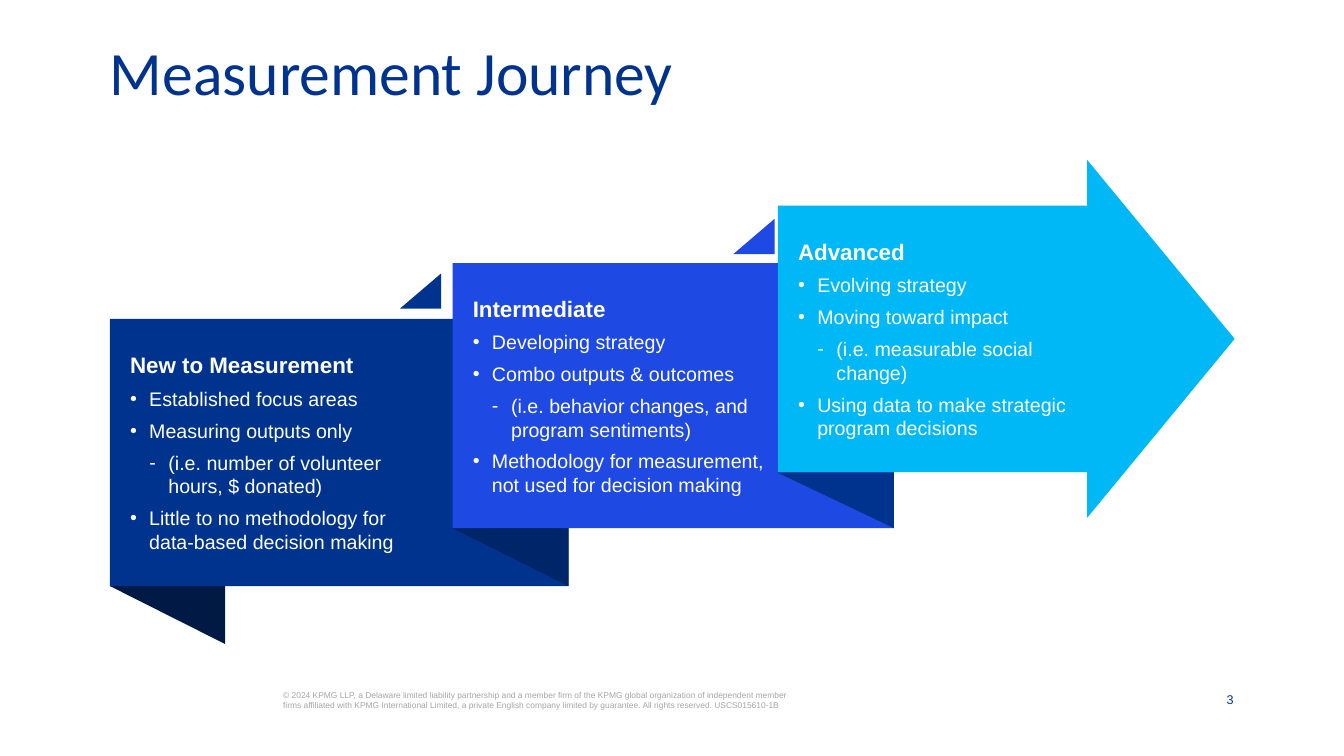
from dataclasses import dataclass

from lxml.etree import SubElement
from pptx import Presentation
from pptx.dml.color import RGBColor
from pptx.enum.shapes import MSO_SHAPE
from pptx.enum.text import MSO_ANCHOR as Anchor, PP_ALIGN as Align
from pptx.oxml.ns import qn
from pptx.util import Pt

NAVY, BLUE, CYAN = "00338D", "1E49E2", "00B8F5"
WHITE, GREY = "FFFFFF", "A6A6A6"
INSET = 14.4
INDENT = 13.7


@dataclass(frozen=True)
class Item:
    text: str
    depth: int = 1


@dataclass(frozen=True)
class Fold:
    """Shaded triangle hanging from the lower left corner of a stage."""
    left: float
    top: float
    width: float
    height: float
    color: str


@dataclass(frozen=True)
class Stage:
    heading: str
    items: tuple[Item, ...]
    preset: MSO_SHAPE
    adjustments: tuple[float, ...]
    left: float
    top: float
    width: float
    height: float
    right_inset: float
    color: str
    fold: Fold


@dataclass(frozen=True)
class Corner:
    left: float
    top: float
    color: str


STAGES = (
    Stage(
        "New to Measurement",
        (
            Item("Established focus areas"),
            Item("Measuring outputs only"),
            Item("(i.e. number of volunteer hours, $ donated)", 2),
            Item("Little to no methodology for\ndata-based decision making"),
        ),
        MSO_SHAPE.RECTANGLE, (), 78.5, 227.7, 327.6, 190.9, 93.6, NAVY,
        Fold(78.5, 418.6, 82.3, 41.4, "001A46"),
    ),
    Stage(
        "Intermediate",
        (
            Item("Developing strategy"),
            Item("Combo outputs & outcomes"),
            Item("(i.e. behavior changes, and program sentiments)", 2),
            Item("Methodology for measurement, not used for decision making"),
        ),
        MSO_SHAPE.RECTANGLE, (), 323.3, 187.9, 315.3, 189.3, 72, BLUE,
        Fold(322.9, 377.2, 83.2, 41.4, "00266A"),
    ),
    Stage(
        "Advanced",
        (
            Item("Evolving strategy"),
            Item("Moving toward impact"),
            Item("(i.e. measurable social change)", 2),
            Item("Using data to make strategic program decisions"),
        ),
        MSO_SHAPE.RIGHT_ARROW, (0.745, 0.412),
        555.7, 114.3, 326.2, 255.5, 21.6, CYAN,
        Fold(555.2, 337.5, 83.3, 39.7, NAVY),
    ),
)
CORNERS = (Corner(285.6, 195.3, NAVY), Corner(523.8, 156.3, BLUE))


def rgb(color: str) -> RGBColor:
    return RGBColor.from_string(color)


def paint(shape, color: str) -> None:
    shape.shadow.inherit = False
    shape.fill.solid()
    shape.fill.fore_color.rgb = rgb(color)
    shape.line.fill.background()


def add_run(paragraph, text: str, size: float, color: str,
            bold: bool = False, face: str = "Arial") -> None:
    run = paragraph.add_run()
    run.text = text
    font = run.font
    font.name, font.size, font.bold = face, Pt(size), bold
    font.color.rgb = rgb(color)


def set_insets(frame, left: float, top: float, right: float, bottom: float) -> None:
    frame.margin_left, frame.margin_top = Pt(left), Pt(top)
    frame.margin_right, frame.margin_bottom = Pt(right), Pt(bottom)


def set_bullet(paragraph, depth: int) -> None:
    properties = paragraph._p.get_or_add_pPr()
    properties.set("marL", str(Pt(INDENT * depth)))
    properties.set("indent", str(-Pt(INDENT)))
    SubElement(properties, qn("a:buFont")).set("typeface", "Arial")
    SubElement(properties, qn("a:buChar")).set("char", "•" if depth == 1 else "-")


def add_fold(slide, fold: Fold) -> None:
    left, top = Pt(fold.left), Pt(fold.top)
    right, bottom = Pt(fold.left + fold.width), Pt(fold.top + fold.height)
    outline = slide.shapes.build_freeform(left, top)
    outline.add_line_segments([(right, top), (right, bottom)], close=True)
    paint(outline.convert_to_shape(), fold.color)


def add_stage(slide, stage: Stage) -> None:
    panel = slide.shapes.add_shape(
        stage.preset, Pt(stage.left), Pt(stage.top), Pt(stage.width), Pt(stage.height))
    for index, value in enumerate(stage.adjustments):
        panel.adjustments[index] = value
    paint(panel, stage.color)

    frame = panel.text_frame
    frame.word_wrap = True
    frame.vertical_anchor = Anchor.MIDDLE
    set_insets(frame, INSET, INSET, stage.right_inset, INSET)
    heading = frame.paragraphs[0]
    heading.alignment, heading.space_after = Align.LEFT, Pt(6)
    add_run(heading, stage.heading, 16, WHITE, bold=True)

    for item in stage.items:
        paragraph = frame.add_paragraph()
        paragraph.level = item.depth - 1
        set_bullet(paragraph, item.depth)
        paragraph.alignment, paragraph.space_after = Align.LEFT, Pt(6)
        for number, line in enumerate(item.text.split("\n")):
            if number:
                paragraph.add_line_break()
            add_run(paragraph, line, 14, WHITE)


def add_corner(slide, corner: Corner) -> None:
    triangle = slide.shapes.add_shape(
        MSO_SHAPE.ISOSCELES_TRIANGLE, Pt(corner.left), Pt(corner.top), Pt(29.5), Pt(25.2))
    triangle.adjustments[0] = 1
    paint(triangle, corner.color)


def add_title(slide, text: str) -> None:
    title = slide.shapes.title
    title.left, title.top, title.width, title.height = Pt(78.5), Pt(33.8), Pt(803.5), Pt(41.8)
    frame = title.text_frame
    frame.vertical_anchor = Anchor.BOTTOM
    set_insets(frame, 0, 0, 0, 0)
    paragraph = frame.paragraphs[0]
    paragraph.alignment, paragraph.line_spacing = Align.LEFT, 0.7
    add_run(paragraph, text, 44, NAVY, face="Calibri")


def add_footer_text(slide, text: str, left: float, width: float, height: float,
                    size: float, color: str, align: Align, anchor: Anchor) -> None:
    box = slide.shapes.add_textbox(Pt(left), Pt(493.2), Pt(width), Pt(height))
    frame = box.text_frame
    frame.word_wrap = True
    frame.vertical_anchor = anchor
    set_insets(frame, 0, 0, 0, 0)
    paragraph = frame.paragraphs[0]
    paragraph.alignment = align
    add_run(paragraph, text, size, color)


def main() -> None:
    deck = Presentation()
    deck.slide_width, deck.slide_height = Pt(960), Pt(540)
    slide = deck.slides.add_slide(deck.slide_layouts[5])

    add_title(slide, "Measurement Journey")
    for stage in STAGES:
        add_fold(slide, stage.fold)
        add_stage(slide, stage)
    for corner in CORNERS:
        add_corner(slide, corner)

    copyright_line = (
        "© 2024 KPMG LLP, a Delaware limited liability partnership and a member firm of "
        "the KPMG global organization of independent member firms affiliated with KPMG "
        "International Limited, a private English company limited by guarantee. "
        "All rights reserved. USCS015610-1B")
    add_footer_text(slide, copyright_line, 202.3, 367.2, 14.4, 6, GREY, Align.LEFT, Anchor.TOP)
    add_footer_text(slide, "3", 861.8, 19.4, 11.5, 9, NAVY, Align.RIGHT, Anchor.BOTTOM)
    deck.save("out.pptx")


if __name__ == "__main__":
    main()
